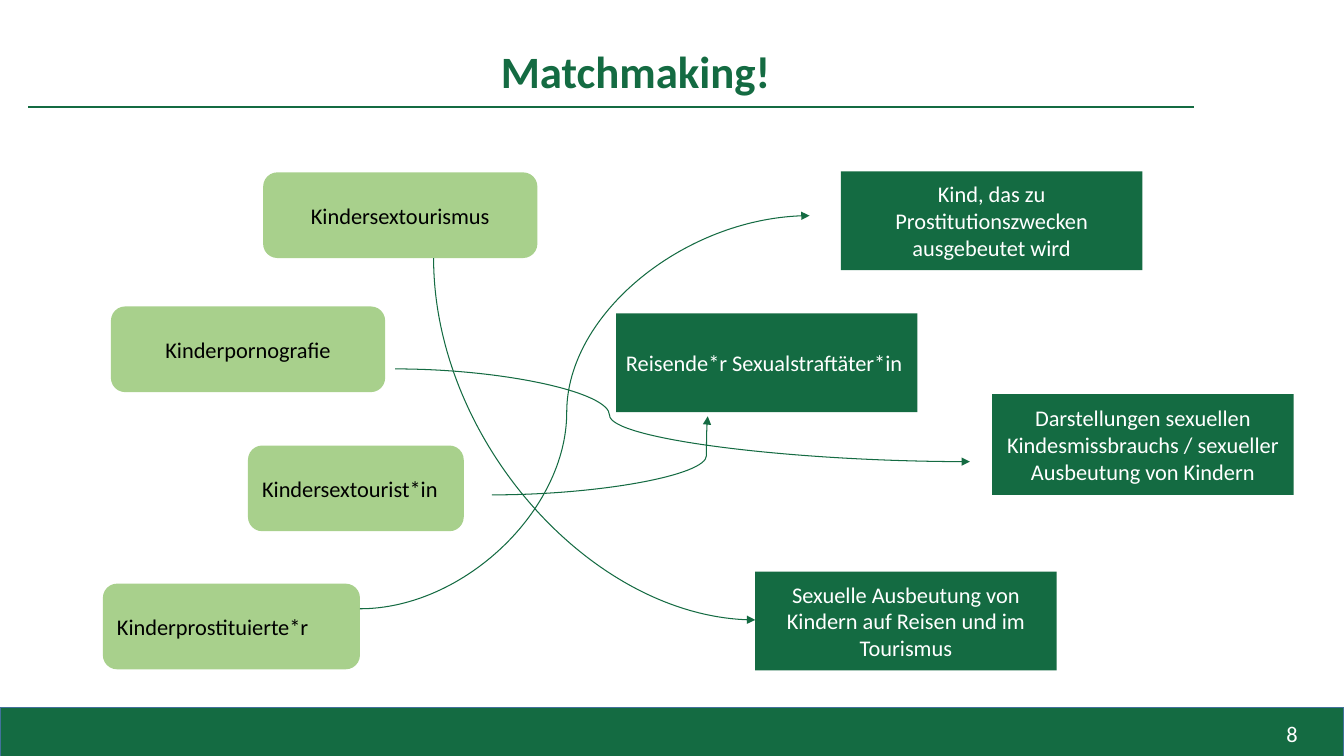
import pptx
import pptx.util
import pptx.dml.color
import pptx.enum.shapes
import pptx.enum.text
import pptx.oxml
import pptx.oxml.ns
from pptx.util import Inches

GREEN, LIGHT, WHITE, BLACK = "146B42", "A8D08C", "FFFFFF", "000000"
FONT = "Calibri"
SHAPE = pptx.enum.shapes.MSO_SHAPE
CONNECTOR = pptx.enum.shapes.MSO_CONNECTOR
ALIGN = pptx.enum.text.PP_ALIGN
ANCHOR = pptx.enum.text.MSO_ANCHOR

# left, top, width, text, alignment
TERMS = [
    (2.61, 1.71, 2.72, "Kindersextourismus", ALIGN.CENTER),
    (1.1, 3.04, 2.72, "Kinderpornografie", ALIGN.CENTER),
    (1.02, 5.79, 2.55, "Kinderprostituierte*r", ALIGN.LEFT),
    (2.46, 4.42, 2.14, "Kindersextourist*in", ALIGN.LEFT),
]
# left, top, height, text, alignment
ALTERNATIVES = [
    (9.84, 3.91, 1, "Darstellungen sexuellen Kindesmissbrauchs / sexueller "
     "Ausbeutung von Kindern", ALIGN.CENTER),
    (6.11, 3.11, 0.98, "Reisende*r Sexualstraftäter*in", ALIGN.LEFT),
    (7.49, 5.67, 0.98, "Sexuelle Ausbeutung von Kindern auf Reisen und im "
     "Tourismus", ALIGN.CENTER),
    (8.34, 1.7, 0.98, "Kind, das zu Prostitutionszwecken ausgebeutet wird",
     ALIGN.CENTER),
]
# start, end, place of the bend in thousandths of the width
S_CURVES = [
    ((3.57, 6.04), (8.03, 2.14), 460),
    ((4.88, 4.91), (7.02, 4.13), 994),
    ((3.92, 3.66), (9.62, 4.58), 373),
]


def rgb(value):
    return pptx.dml.color.RGBColor.from_string(value)


def set_text(tf, text, size, color, align, bold=False):
    tf.word_wrap = True
    p = tf.paragraphs[0]
    p.text = text
    p.alignment = align
    p.font.name = FONT
    p.font.size = pptx.util.Pt(size)
    p.font.bold = bold
    p.font.color.rgb = rgb(color)
    return p


def add_box(s, kind, left, top, width, height, fill):
    sp = s.shapes.add_shape(kind, Inches(left), Inches(top),
                            Inches(width), Inches(height))
    sp.shadow.inherit = False
    sp.fill.solid()
    sp.fill.fore_color.rgb = rgb(fill)
    sp.line.fill.background()
    return sp


def add_label_box(s, kind, left, top, width, height, fill, text, color, align):
    sp = add_box(s, kind, left, top, width, height, fill)
    sp.text_frame.vertical_anchor = ANCHOR.MIDDLE
    set_text(sp.text_frame, text, 16, color, align)


def add_line(s, kind, start, end, width):
    c = s.shapes.add_connector(kind, *map(Inches, start + end))
    c.line.color.rgb = rgb(GREEN)
    c.line.width = pptx.util.Pt(width)
    pptx.oxml.ns.qn("a:effectLst")
    c._element.spPr.append(
        pptx.oxml.parse_xml(f'<a:effectLst {pptx.oxml.ns.nsdecls("a")}/>'))
    return c


def add_curved_arrow(s, start, end):
    c = add_line(s, CONNECTOR.CURVE, start, end, 0.75)
    c.line._get_or_add_ln().append(pptx.oxml.parse_xml(
        f'<a:tailEnd {pptx.oxml.ns.nsdecls("a")} type="triangle"/>'))
    return c


def add_s_curve(s, start, end, bend):
    c = add_curved_arrow(s, start, end)
    guides = c._element.spPr.find(".//" + pptx.oxml.ns.qn("a:avLst"))
    guides.append(pptx.oxml.parse_xml(
        f'<a:gd {pptx.oxml.ns.nsdecls("a")} name="adj1" '
        f'fmla="val {bend * 100}"/>'))


def add_quarter_curve(s, start, end):
    """Arrow that leaves downwards and arrives to the right."""
    (x1, y1), (x2, y2) = start, end
    mid_x, mid_y = (x1 + x2) / 2, (y1 + y2) / 2
    half_w, half_h = (y2 - y1) / 2, (x2 - x1) / 2
    # Mirrored and turned by 270 degrees, so width and height swap.
    c = add_curved_arrow(s, (mid_x + half_w, mid_y - half_h),
                         (mid_x - half_w, mid_y + half_h))
    spPr = c._element.spPr
    spPr.find(pptx.oxml.ns.qn("a:xfrm")).set("rot", str(270 * 60000))
    spPr.find(pptx.oxml.ns.qn("a:prstGeom")).set("prst", "curvedConnector2")


def add_title(s, text):
    title = s.shapes.title
    title.left, title.top = Inches(0.92), Inches(0.42)
    title.width, title.height = Inches(10.77), Inches(0.62)
    title.text_frame.vertical_anchor = ANCHOR.MIDDLE
    p = set_text(title.text_frame, text, 32, GREEN, ALIGN.CENTER, bold=True)
    p.line_spacing = 0.9
    add_line(s, CONNECTOR.STRAIGHT, (0.28, 1.06), (11.84, 1.06), 1.5)


def add_footer(s, number):
    bar = add_box(s, SHAPE.RECTANGLE, 0, 7.02, 13.33, 0.55, GREEN)
    bar.line.color.rgb = rgb("42719B")
    bar.line.width = pptx.util.Pt(1)
    box = s.shapes.add_textbox(Inches(11.41), Inches(7.1),
                               Inches(1.56), Inches(0.37))
    set_text(box.text_frame, number, 16, WHITE, ALIGN.RIGHT)


def main():
    prs = pptx.Presentation()
    prs.slide_width, prs.slide_height = Inches(13.33), Inches(7.5)
    s = prs.slides.add_slide(prs.slide_layouts[5])
    add_footer(s, "8")
    add_title(s, "Matchmaking!")
    for left, top, width, text, align in TERMS:
        add_label_box(s, SHAPE.ROUNDED_RECTANGLE, left, top, width, 0.85,
                      LIGHT, text, BLACK, align)
    for left, top, height, text, align in ALTERNATIVES:
        add_label_box(s, SHAPE.RECTANGLE, left, top, 2.99, height,
                      GREEN, text, WHITE, align)
    add_quarter_curve(s, (4.3, 2.56), (7.49, 6.15))
    for start, end, bend in S_CURVES:
        add_s_curve(s, start, end, bend)
    prs.save("out.pptx")


if __name__ == "__main__":
    main()
